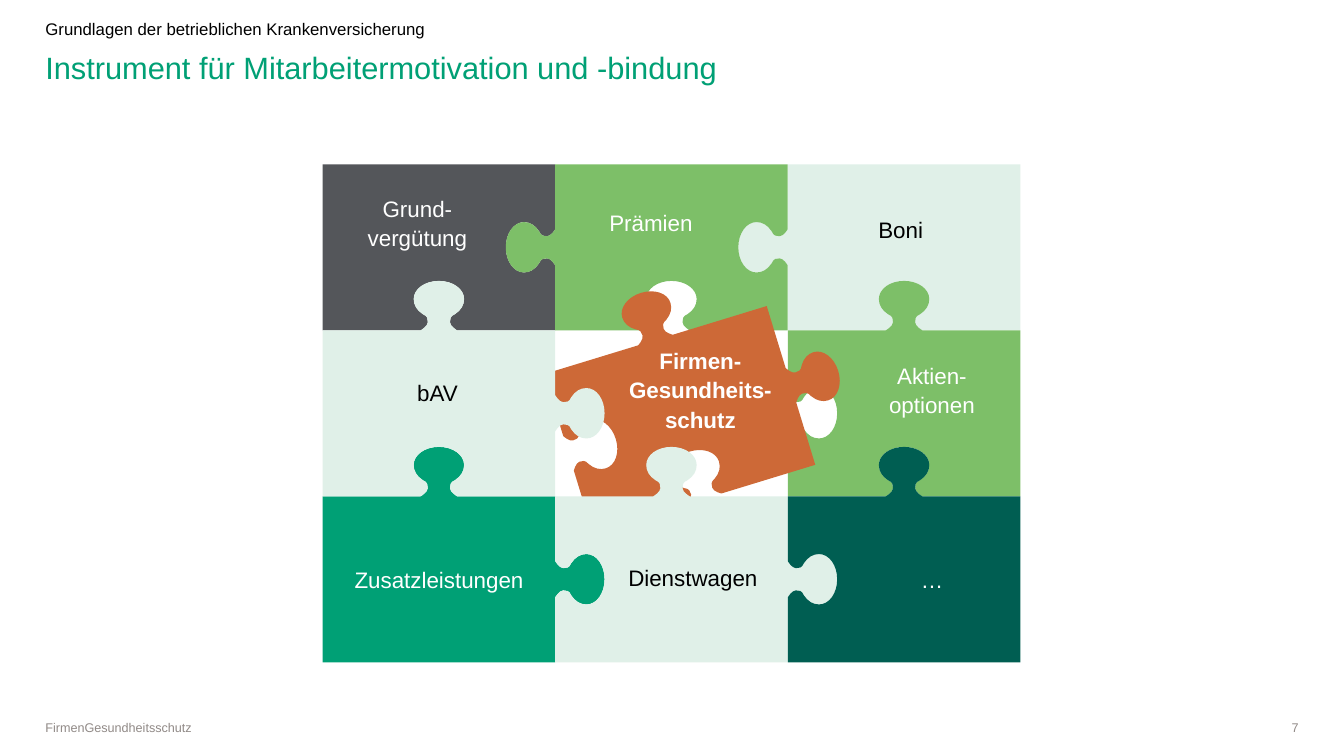
from typing import NamedTuple

from lxml import etree
from pptx import Presentation
from pptx.dml.color import RGBColor
from pptx.enum import text
from pptx.oxml import ns
from pptx.util import Inches, Pt

COLORS = {
    "black": "000000", "white": "FFFFFF", "muted": "918A87",
    "gray": "54565A", "mint": "E0F0E8", "light": "7DBF68",
    "green": "00A075", "dark": "005E52", "orange": "CD6937",
}
FONT = "Arial"
BOARD = (3.2, 1.63, 6.92, 4.94)
GRID = 3
# Half of a knob as Bezier segments: (distance along the side, distance outward)
KNOB_START = (-0.18, 0)
KNOB_CURVES = [
    [(-0.18, 0), (-0.11, 0.04), (-0.11, 0.08)],
    [(-0.11, 0.11), (-0.11, 0.14), (-0.16, 0.16)],
    [(-0.22, 0.2), (-0.25, 0.25), (-0.25, 0.31)],
    [(-0.25, 0.41), (-0.14, 0.49), (0, 0.49)],
]


class Piece(NamedTuple):
    """Sides run top, right, bottom, left: 1 knob, -1 socket, 0 straight.

    The label box is left, top, width and height relative to the cell.
    """
    row: int
    column: int
    fill: str
    sides: tuple
    label: str
    label_box: tuple
    ink: str = "white"
    rotation: int = 0
    bold: bool = False


# From back to front
PIECES = [
    Piece(0, 2, "mint", (0, 0, -1, 1), "Boni", (0.06, 0.11, 2.12, 1.04), "black"),
    Piece(0, 0, "gray", (0, -1, -1, 0), "Grund-vergütung", (0.12, 0.07, 1.64, 1)),
    Piece(2, 0, "green", (1, 1, 0, 0), "Zusatzleistungen", (0.12, 0.1, 2.07, 1.42)),
    Piece(0, 1, "light", (0, -1, -1, 1), "Prämien", (0.1, 0.09, 1.7, 0.95)),
    Piece(1, 2, "light", (1, 0, -1, -1), "Aktien-optionen", (0.61, 0.08, 1.64, 1)),
    Piece(1, 1, "orange", (1, 1, -1, -1), "Firmen-Gesundheits-schutz",
          (0.57, 0.08, 1.74, 1), rotation=343, bold=True),
    Piece(1, 0, "mint", (1, 1, -1, 0), "bAV", (0.06, 0.06, 2.16, 1.09), "black"),
    Piece(2, 1, "mint", (1, 1, 0, -1), "Dienstwagen", (0.52, 0.07, 1.69, 1.45), "black"),
    Piece(2, 2, "dark", (1, 0, 0, -1), "…", (0.61, 0.1, 1.64, 1.42)),
]


def color(name):
    return RGBColor.from_string(COLORS[name])


def add_text(page, box, words, size, ink, bold=False, spacing=1.0, inset=(0, 0),
             align=text.PP_ALIGN.LEFT, anchor=text.MSO_ANCHOR.TOP):
    frame = page.shapes.add_textbox(*map(Inches, box)).text_frame
    frame.word_wrap = True
    frame.vertical_anchor = anchor
    frame.margin_left = frame.margin_right = Inches(inset[0])
    frame.margin_top = frame.margin_bottom = Inches(inset[1])
    para = frame.paragraphs[0]
    para.alignment = align
    para.line_spacing = spacing
    span = para.add_run()
    span.text = words
    span.font.name = FONT
    span.font.size = Pt(size)
    span.font.bold = bold
    span.font.color.rgb = color(ink)


def knob_segments():
    """Return the knob's start line and curves, the second half mirrored."""
    points = [KNOB_START] + [point for curve in KNOB_CURVES for point in curve]
    points += [(-along, out) for along, out in reversed(points[:-1])]
    return [points[:1]] + [points[i:i + 3] for i in range(1, len(points), 3)]


def piece_segments(box, sides):
    """Walk clockwise: one point makes a line, three points make a curve."""
    left, top, width, height = box
    right, bottom = left + width, top + height
    corners = [(left, top), (right, top), (right, bottom), (left, bottom)]
    directions = [(1, 0), (0, 1), (-1, 0), (0, -1)]
    segments = []
    for index, (side, (dx, dy)) in enumerate(zip(sides, directions)):
        start, end = corners[index], corners[(index + 1) % 4]
        segments.append([start])
        if side:
            middle_x, middle_y = (start[0] + end[0]) / 2, (start[1] + end[1]) / 2
            segments += [[(middle_x + along * dx + side * out * dy,
                           middle_y + along * dy - side * out * dx)
                          for along, out in segment] for segment in knob_segments()]
    return segments


def bend_curves(shape, segments):
    """Join the three lines of each curved segment into one Bezier curve."""
    lines = iter(list(shape._element.iter(ns.qn("a:lnTo"))))
    for segment in segments:
        group = [next(lines) for _ in segment]
        if len(group) == 3:
            curve = etree.Element(ns.qn("a:cubicBezTo"))
            group[0].addprevious(curve)
            for line in group:
                curve.append(line[0])
                line.getparent().remove(line)


def add_piece(page, box, piece):
    first, *segments = piece_segments(box, piece.sides)
    builder = page.shapes.build_freeform(*map(Inches, first[0]))
    builder.add_line_segments([(Inches(x), Inches(y))
                               for segment in segments for x, y in segment], close=True)
    shape = builder.convert_to_shape()
    bend_curves(shape, segments)
    shape.shadow.inherit = False
    shape.fill.solid()
    shape.fill.fore_color.rgb = color(piece.fill)
    shape.line.fill.background()
    shape.rotation = piece.rotation


def add_puzzle(page, box):
    left, top, width, height = box
    cell_width, cell_height = width / GRID, height / GRID
    cells = [(left + piece.column * cell_width, top + piece.row * cell_height,
              cell_width, cell_height) for piece in PIECES]
    for cell, piece in zip(cells, PIECES):
        add_piece(page, cell, piece)
    for cell, piece in zip(cells, PIECES):
        dx, dy, label_width, label_height = piece.label_box
        add_text(page, (cell[0] + dx, cell[1] + dy, label_width, label_height),
                 piece.label, 16, piece.ink, piece.bold, 1.1, (0.12, 0.08),
                 text.PP_ALIGN.CENTER, text.MSO_ANCHOR.MIDDLE)


def add_header(page, box):
    left, top, width, height = box
    add_text(page, (left, top, 8.35, 0.16),
             "Grundlagen der betrieblichen Krankenversicherung", 12, "black", spacing=0.9)
    add_text(page, (left, top + 0.31, width, height - 0.31),
             "Instrument für Mitarbeitermotivation und -bindung", 22, "green", spacing=0.9)


def add_footer(page, box):
    left, top, width, height = box
    number_width = 0.51
    add_text(page, (left, top, 5.12, height), "FirmenGesundheitsschutz", 9, "muted",
             anchor=text.MSO_ANCHOR.BOTTOM)
    add_text(page, (left + width - number_width, top, number_width, height), "7", 9, "muted",
             align=text.PP_ALIGN.RIGHT, anchor=text.MSO_ANCHOR.BOTTOM)


def main():
    deck = Presentation()
    deck.slide_width, deck.slide_height = Inches(13.33), Inches(7.5)
    page = deck.slides.add_slide(deck.slide_layouts[6])
    add_header(page, (0.45, 0.21, 12.44, 1.09))
    add_puzzle(page, BOARD)
    add_footer(page, (0.45, 7.16, 12.43, 0.13))
    deck.save("out.pptx")


if __name__ == "__main__":
    main()
